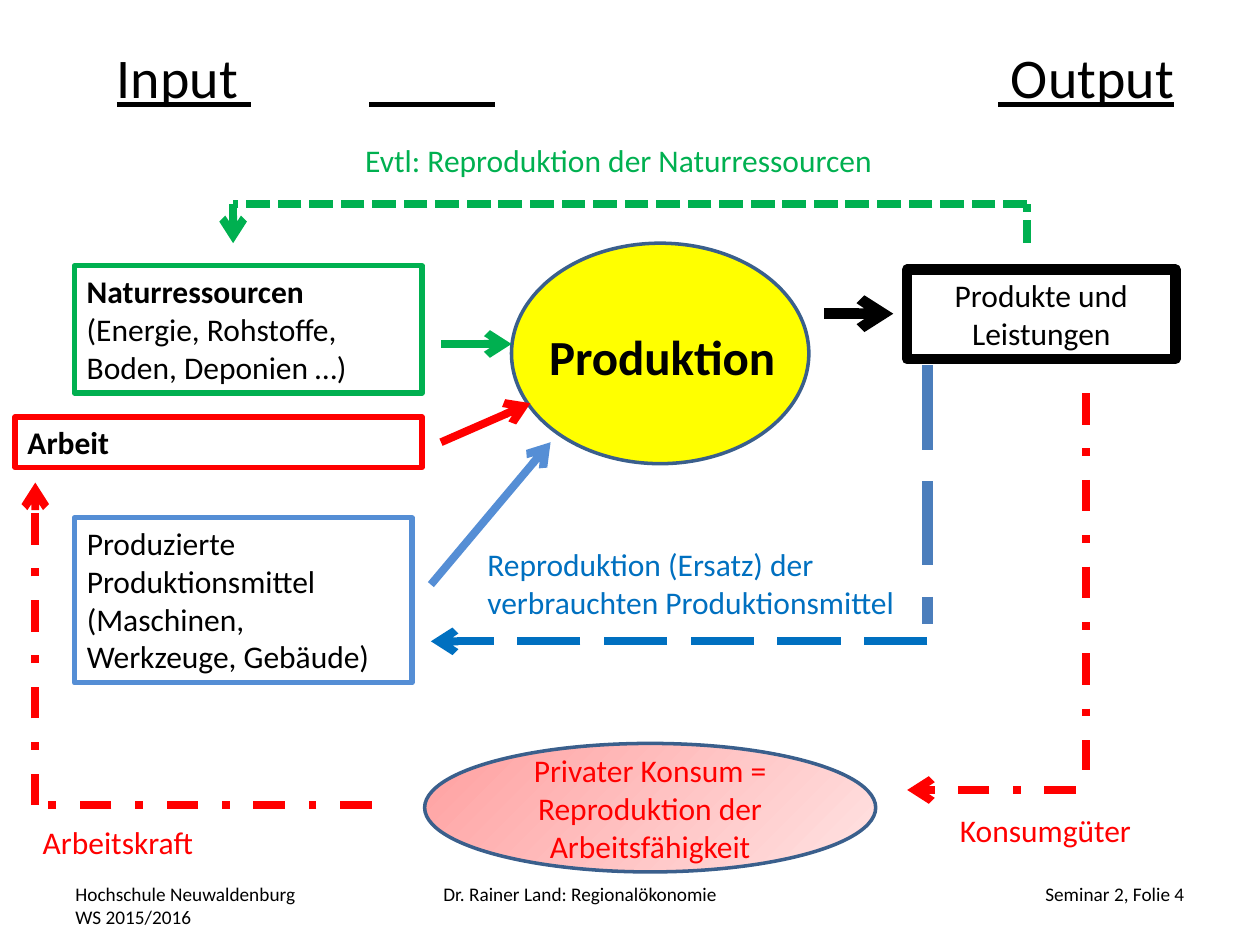
from dataclasses import dataclass
from typing import Optional

import pptx
import pptx.dml.color
import pptx.enum.dml
import pptx.enum.shapes
import pptx.enum.text
import pptx.oxml.ns
import pptx.util
from lxml import etree

Inches = pptx.util.Inches
Pt = pptx.util.Pt
qn = pptx.oxml.ns.qn
SHAPE = pptx.enum.shapes.MSO_SHAPE
ALIGN = pptx.enum.text.PP_ALIGN
ANCHOR = pptx.enum.text.MSO_ANCHOR
DASH = pptx.enum.dml.MSO_LINE

BLACK, GREEN, RED = "000000", "00B050", "FF0000"
BLUE, LIGHT_BLUE, NAVY, STEEL = "0070C0", "558ED5", "3A5F8C", "4B7EBC"
YELLOW, ROSE, PALE_ROSE = "FFFF00", "FFA0A0", "FFE3E3"


@dataclass(frozen=True)
class Style:
    size: float = 18
    color: str = BLACK
    bold: bool = False
    underline: bool = False
    align: ALIGN = ALIGN.LEFT
    anchor: ANCHOR = ANCHOR.TOP
    wrap: bool = True


@dataclass(frozen=True)
class Label:
    text: str
    at: tuple[float, float, float, float]
    style: Style


@dataclass(frozen=True)
class Box:
    at: tuple[float, float, float, float]
    line: str
    width: float
    paragraphs: tuple[tuple[str, bool], ...] = ()
    style: Style = Style()
    kind: SHAPE = SHAPE.RECTANGLE
    fill: tuple[str, ...] = ()


@dataclass(frozen=True)
class Flow:
    start: tuple[float, float]
    end: tuple[float, float]
    color: str
    width: float = 4.5
    dash: Optional[DASH] = None
    arrow: bool = True


def rgb(value: str) -> pptx.dml.color.RGBColor:
    return pptx.dml.color.RGBColor.from_string(value)


def write(frame, paragraphs, style: Style) -> None:
    frame.word_wrap = style.wrap
    frame.vertical_anchor = style.anchor
    for index, (text, bold) in enumerate(paragraphs):
        paragraph = frame.add_paragraph() if index else frame.paragraphs[0]
        paragraph.alignment = style.align
        for part, line in enumerate(text.split("\n")):
            if part:
                paragraph.add_line_break()
            run = paragraph.add_run()
            run.text = line
            run.font.name = "Calibri"
            run.font.size = Pt(style.size)
            run.font.bold = bold
            run.font.underline = style.underline
            run.font.color.rgb = rgb(style.color)


def draw_label(slide, label: Label):
    holder = slide.shapes.add_textbox(*map(Inches, label.at))
    write(holder.text_frame, [(label.text, label.style.bold)], label.style)
    return holder


def draw_box(slide, box: Box) -> None:
    shape = slide.shapes.add_shape(box.kind, *map(Inches, box.at))
    shape.shadow.inherit = False
    shape.line.color.rgb = rgb(box.line)
    shape.line.width = Pt(box.width)
    if len(box.fill) > 1:
        shape.fill.gradient()
        shape.fill.gradient_angle = 315
        for stop, color in zip(shape.fill.gradient_stops, box.fill):
            stop.color.rgb = rgb(color)
    elif box.fill:
        shape.fill.solid()
        shape.fill.fore_color.rgb = rgb(box.fill[0])
    else:
        shape.fill.background()
    write(shape.text_frame, box.paragraphs, box.style)


def draw_flow(slide, flow: Flow) -> None:
    connector = slide.shapes.add_connector(
        pptx.enum.shapes.MSO_CONNECTOR.STRAIGHT,
        *map(Inches, flow.start + flow.end))
    connector.line.color.rgb = rgb(flow.color)
    connector.line.width = Pt(flow.width)
    if flow.dash is not None:
        connector.line.dash_style = flow.dash
    properties = connector._element.spPr
    if flow.arrow:
        etree.SubElement(properties.find(qn("a:ln")), qn("a:tailEnd"), type="arrow")
    etree.SubElement(properties, qn("a:effectLst"))


def draw_heading(slide) -> None:
    heading = draw_label(slide, Label(
        "Input \t Output", (0.83, 0.3, 8.67, 0.61),
        Style(32, underline=True, anchor=ANCHOR.MIDDLE)))
    # Right tab stop sets "Output" at the right edge
    properties = heading.text_frame.paragraphs[0]._p.get_or_add_pPr()
    tabs = etree.SubElement(properties, qn("a:tabLst"))
    etree.SubElement(tabs, qn("a:tab"), pos=str(Inches(8.39)), algn="r")
    draw_flow(slide, Flow((2.93, 0.83), (3.93, 0.83), BLACK, 3, arrow=False))


CENTERED = Style(align=ALIGN.CENTER)

BOXES = [
    Box((4.06, 1.93, 2.36, 1.75), NAVY, 2, kind=SHAPE.OVAL, fill=(YELLOW,)),
    Box((0.59, 2.11, 2.76, 1.01), GREEN, 3,
        (("Naturressourcen", True),
         ("(Energie, Rohstoffe, Boden, Deponien …)", False))),
    Box((0.12, 3.31, 3.23, 0.4), RED, 3, (("Arbeit", True),)),
    Box((0.59, 4.11, 2.68, 1.31), LIGHT_BLUE, 3,
        (("Produzierte Produktionsmittel (Maschinen, Werkzeuge, Gebäude)", False),)),
    Box((7.2, 2.14, 2.13, 0.71), BLACK, 6,
        (("Produkte und Leistungen", False),), CENTERED),
    Box((3.37, 5.9, 3.58, 1.02), NAVY, 2,
        (("Privater Konsum = Reproduktion der Arbeitsfähigkeit", False),),
        Style(color=RED, align=ALIGN.CENTER, anchor=ANCHOR.MIDDLE),
        SHAPE.OVAL, (ROSE, PALE_ROSE)),
]

FLOWS = [
    # Inputs into production, products out of it
    Flow((3.5, 2.73), (4.06, 2.73), GREEN),
    Flow((3.5, 3.51), (4.21, 3.2), RED),
    Flow((3.42, 4.64), (4.37, 3.51), LIGHT_BLUE),
    Flow((6.54, 2.49), (7.09, 2.49), BLACK, 6),
    # Replacement of means of production
    Flow((7.36, 5.09), (3.42, 5.09), BLUE, dash=DASH.LONG_DASH),
    Flow((7.36, 2.9), (7.36, 4.95), STEEL, 6, DASH.LONG_DASH, False),
    # Consumption and labour
    Flow((8.62, 3.12), (8.62, 6.11), RED, dash=DASH.DASH_DOT, arrow=False),
    Flow((8.54, 6.27), (7.2, 6.27), RED, dash=DASH.DASH_DOT),
    Flow((0.28, 6.39), (0.28, 3.83), RED, dash=DASH.DASH_DOT),
    Flow((2.95, 6.39), (0.28, 6.39), RED, dash=DASH.DASH_DOT, arrow=False),
    # Renewal of natural resources
    Flow((8.15, 1.93), (8.15, 1.62), GREEN, dash=DASH.SQUARE_DOT, arrow=False),
    Flow((8.15, 1.62), (1.85, 1.62), GREEN, dash=DASH.SQUARE_DOT, arrow=False),
    Flow((1.85, 1.62), (1.85, 1.93), GREEN, dash=DASH.SQUARE_DOT),
]

LABELS = [
    Label("Produktion", (4.21, 2.54, 2.09, 0.57),
          Style(28, bold=True, align=ALIGN.CENTER)),
    Label("Reproduktion (Ersatz) der \nverbrauchten Produktionsmittel",
          (3.77, 4.28, 3.47, 0.71), Style(color=BLUE, wrap=False)),
    Label("Konsumgüter", (7.52, 6.39, 1.81, 0.4), Style(color=RED)),
    Label("Arbeitskraft", (0.24, 6.48, 2.68, 0.4), Style(color=RED)),
    Label("Evtl: Reproduktion der Naturressourcen",
          (2.8, 1.07, 4.29, 0.4), Style(color=GREEN)),
    # Footer
    Label("Hochschule Neuwaldenburg\nWS 2015/2016", (0.5, 6.95, 2.33, 0.4), Style(11)),
    Label("Dr. Rainer Land: Regionalökonomie", (3.42, 6.95, 3.17, 0.4), Style(11)),
    Label("Seminar 2, Folie 4", (7.17, 6.95, 2.33, 0.4), Style(11, align=ALIGN.RIGHT)),
]


def main() -> None:
    deck = pptx.Presentation()
    deck.slide_width, deck.slide_height = Inches(10), Inches(7.5)
    slide = deck.slides.add_slide(deck.slide_layouts[6])
    draw_heading(slide)
    for box in BOXES:
        draw_box(slide, box)
    for flow in FLOWS:
        draw_flow(slide, flow)
    for label in LABELS:
        draw_label(slide, label)
    deck.save("out.pptx")


if __name__ == "__main__":
    main()
